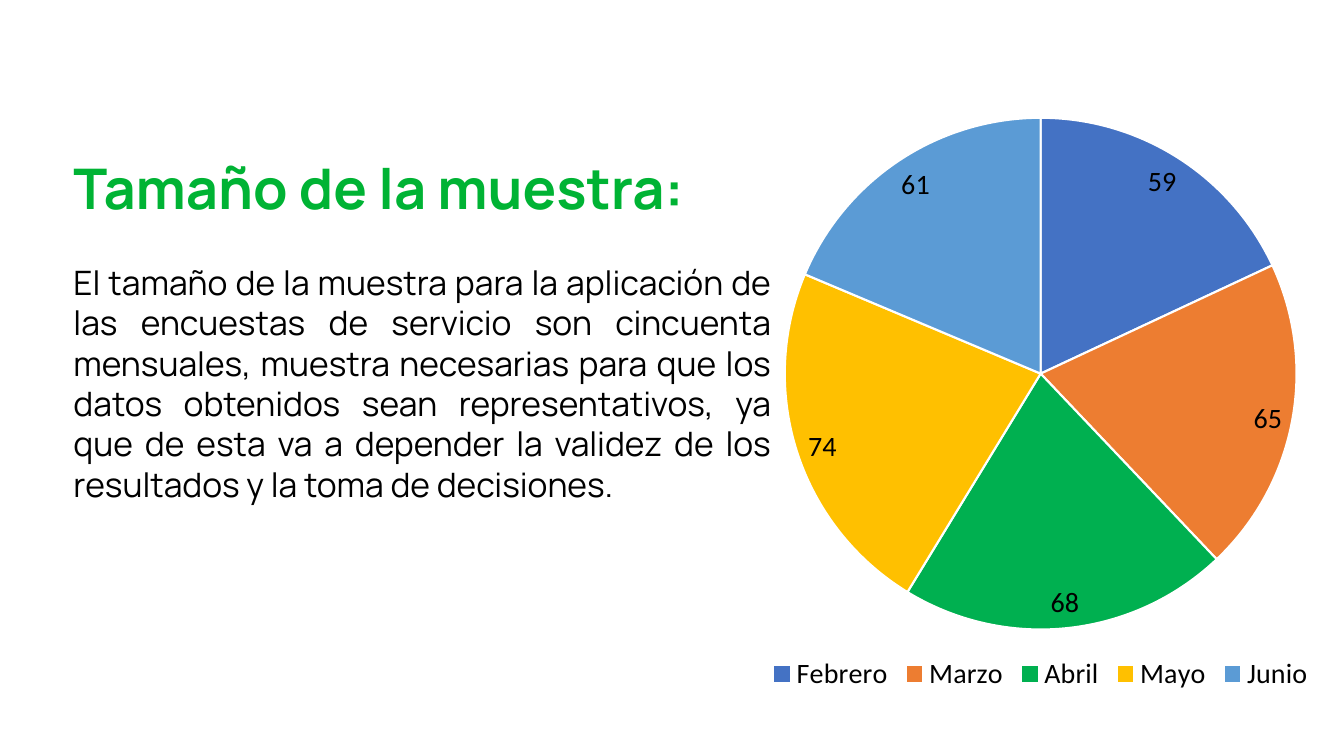
from pptx import Presentation
from pptx.chart.data import CategoryChartData
from pptx.dml.color import RGBColor
from pptx.enum.chart import XL_CHART_TYPE as ChartType
from pptx.enum.chart import XL_LABEL_POSITION as LabelPos
from pptx.enum.chart import XL_LEGEND_POSITION as LegendPos
from pptx.enum.text import MSO_AUTO_SIZE as AutoSize
from pptx.enum.text import PP_ALIGN as Align
from pptx.util import Pt


def rgb(value):
    return RGBColor.from_string(value)


class SlideBuilder:
    text_font = "Manrope"
    chart_font = "Calibri"
    black = "000000"
    green = "00B334"
    white = "FFFFFF"

    def __init__(self, prs):
        self.s = prs.slides.add_slide(prs.slide_layouts[6])

    def style(self, font, name, size, color, bold=False):
        font.name = name
        font.size = Pt(size)
        font.bold = bold
        font.color.rgb = rgb(color)

    def text(self, box, content, size, color, bold=False, align=None, wrap=True):
        sp = self.s.shapes.add_textbox(*map(Pt, box))
        tf = sp.text_frame
        tf.word_wrap = wrap
        tf.auto_size = AutoSize.SHAPE_TO_FIT_TEXT
        p = tf.paragraphs[0]
        p.text = content
        p.alignment = align
        self.style(p.font, self.text_font, size, color, bold)

    def pie(self, box, slices, size):
        data = CategoryChartData()
        data.categories = [month for month, _, _ in slices]
        data.add_series("Series 1", [count for _, count, _ in slices])
        chart = self.s.shapes.add_chart(ChartType.PIE, *map(Pt, box), data).chart
        chart.has_title = False
        self.style(chart.font, self.chart_font, size, self.black)

        chart.has_legend = True
        chart.legend.position = LegendPos.BOTTOM
        chart.legend.include_in_layout = False
        self.style(chart.legend.font, self.chart_font, size, self.black)

        plot = chart.plots[0]
        plot.vary_by_categories = True
        series = plot.series[0]
        for i, (_, _, color) in enumerate(slices):
            fmt = series.points[i].format
            fmt.fill.solid()
            fmt.fill.fore_color.rgb = rgb(color)
            fmt.line.color.rgb = rgb(self.white)
            fmt.line.width = Pt(1.5)

        labels = series.data_labels
        labels.show_value = True
        labels.show_percentage = False
        labels.position = LabelPos.BEST_FIT
        self.style(labels.font, self.chart_font, size, self.black)


def main():
    prs = Presentation()
    prs.slide_width, prs.slide_height = Pt(960), Pt(540)
    slide = SlideBuilder(prs)
    slide.text((45.4, 105.8, 481.7, 55.4), "Tamaño de la muestra:", 40,
               slide.green, bold=True, wrap=False)
    slide.text((45.4, 183.6, 512.6, 181.4),
               "El tamaño de la muestra para la aplicación de las encuestas de "
               "servicio son cincuenta mensuales, muestra necesarias para que los "
               "datos obtenidos sean representativos, ya que de esta va a depender "
               "la validez de los resultados y la toma de decisiones.",
               24, slide.black, align=Align.JUSTIFY)
    slide.pie((494.6, 74.2, 497.5, 423.4), [
        ("Febrero", 59, "4472C4"),
        ("Marzo", 65, "ED7D31"),
        ("Abril", 68, "00B050"),
        ("Mayo", 74, "FFC000"),
        ("Junio", 61, "5B9BD5"),
    ], 20)
    prs.save("out.pptx")


if __name__ == "__main__":
    main()
